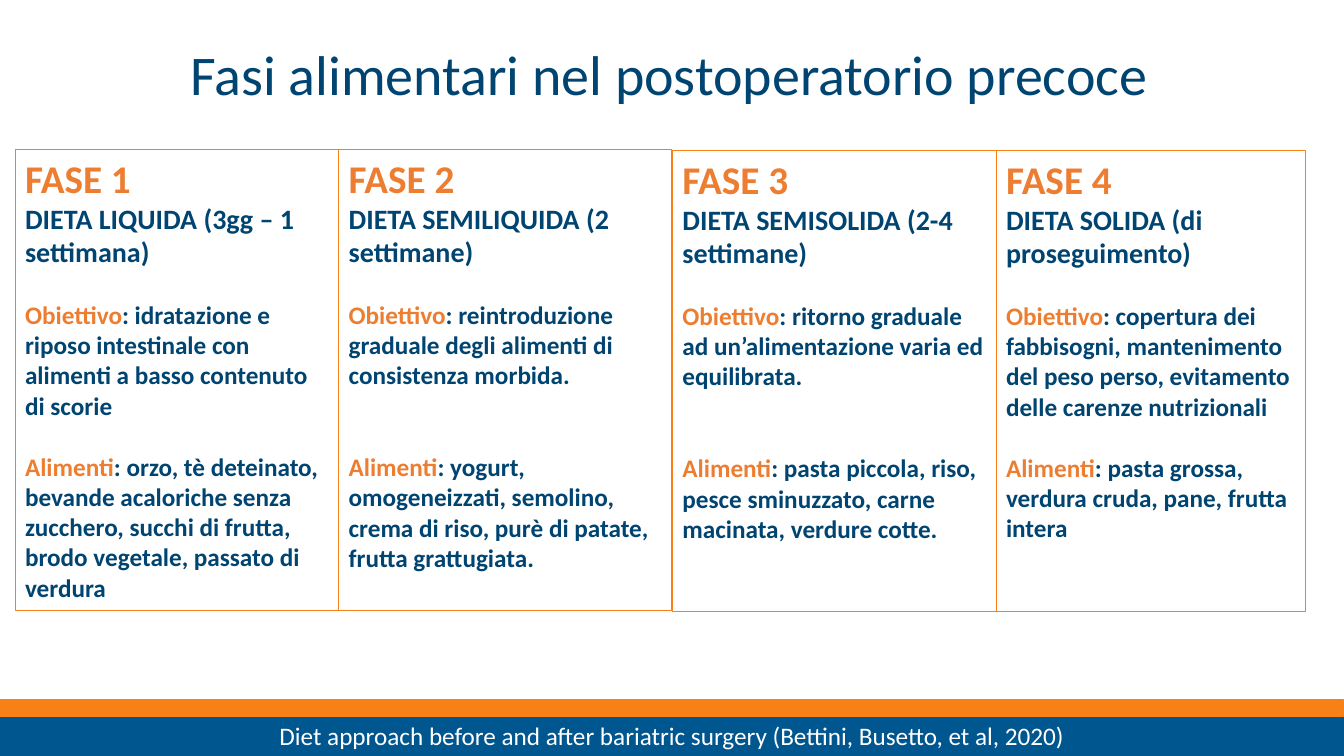
from pptx import Presentation
from pptx import util as u
from pptx.dml.color import RGBColor
from pptx.enum import shapes, text

NAVY = RGBColor(0x00, 0x44, 0x71)
BLUE = RGBColor(0x00, 0x56, 0x8E)
ORANGE = RGBColor(0xF8, 0x81, 0x17)
ACCENT = RGBColor(0xED, 0x7D, 0x31)
WHITE = RGBColor(0xFF, 0xFF, 0xFF)

PHASES = [
    (0.15, 1.48, 3.21, 1, "DIETA LIQUIDA (3gg – 1 settimana)",
     "idratazione e riposo intestinale con alimenti a basso contenuto di scorie",
     "orzo, tè deteinato, bevande acaloriche senza zucchero, succhi di frutta, "
     "brodo vegetale, passato di verdura"),
    (3.36, 1.48, 3.3, 2, "DIETA SEMILIQUIDA (2 settimane)",
     "reintroduzione graduale degli alimenti di consistenza morbida.",
     "yogurt, omogeneizzati, semolino, crema di riso, purè di patate, frutta grattugiata."),
    (6.67, 1.49, 3.21, 2, "DIETA SEMISOLIDA (2-4 settimane)",
     "ritorno graduale ad un’alimentazione varia ed equilibrata.",
     "pasta piccola, riso, pesce sminuzzato, carne macinata, verdure cotte."),
    (9.88, 1.49, 3.07, 1, "DIETA SOLIDA (di proseguimento)",
     "copertura dei fabbisogni, mantenimento del peso perso, evitamento "
     "delle carenze nutrizionali",
     "pasta grossa, verdura cruda, pane, frutta intera"),
]


class DietSlide:
    """Draws the elements of the diet slide in one style."""

    font = "Calibri"
    line_gap = 22

    def __init__(self, slide):
        self.slide = slide

    def add_words(self, paragraph, parts, size, bold=False, gap=0):
        paragraph.alignment = text.PP_ALIGN.LEFT
        paragraph.space_before = u.Pt(gap)
        for words, color in parts:
            run = paragraph.add_run()
            run.text = words
            run.font.name = self.font
            run.font.size = u.Pt(size)
            run.font.bold = bold
            run.font.color.rgb = color

    def title(self, words):
        heading = self.slide.shapes.add_textbox(
            u.Inches(1.79), u.Inches(0.04), u.Inches(9.76), u.Inches(1.45))
        frame = heading.text_frame
        frame.word_wrap = True
        frame.vertical_anchor = text.MSO_ANCHOR.MIDDLE
        self.add_words(frame.paragraphs[0], [(words, NAVY)], 40)
        frame.paragraphs[0].line_spacing = 0.9

    def box(self, left, top, width, height, line, weight, fill=None):
        box = self.slide.shapes.add_shape(
            shapes.MSO_SHAPE.RECTANGLE,
            u.Inches(left), u.Inches(top), u.Inches(width), u.Inches(height))
        box.shadow.inherit = False
        box.line.color.rgb = line
        box.line.width = u.Pt(weight)
        if fill is None:
            box.fill.background()
        else:
            box.fill.solid()
            box.fill.fore_color.rgb = fill
        box.text_frame.word_wrap = True
        return box

    def footer(self, source):
        band = self.box(0, 7.1, 13.33, 0.4, BLUE, 1, BLUE)
        band.text_frame.vertical_anchor = text.MSO_ANCHOR.MIDDLE
        citation = band.text_frame.paragraphs[0]
        self.add_words(citation, [(source, WHITE)], 18)
        citation.alignment = text.PP_ALIGN.CENTER
        self.box(-0.01, 6.94, 13.33, 0.17, ORANGE, 1, ORANGE)

    def phase(self, number, left, top, width, food_gap, diet, goal, foods):
        frame = self.box(left, top, width, 4.58, ORANGE, 0.75).text_frame
        frame.vertical_anchor = text.MSO_ANCHOR.TOP
        rows = [
            ([(f"FASE {number}", ACCENT)], 28, 0),
            ([(diet, NAVY)], 20, 0),
            ([("Obiettivo", ACCENT), (f": {goal}", NAVY)], 18, 1),
            ([("Alimenti", ACCENT), (f": {foods}", NAVY)], 18, food_gap),
        ]
        for index, (parts, size, gap) in enumerate(rows):
            paragraph = frame.add_paragraph() if index else frame.paragraphs[0]
            self.add_words(paragraph, parts, size, True, gap * self.line_gap)


def main():
    deck = Presentation()
    deck.slide_width = u.Inches(13.33)
    deck.slide_height = u.Inches(7.5)
    page = DietSlide(deck.slides.add_slide(deck.slide_layouts[6]))
    page.title("Fasi alimentari nel postoperatorio precoce")
    page.footer("Diet approach before and after bariatric surgery (Bettini, Busetto, et al, 2020)")
    for number, phase in enumerate(PHASES, 1):
        page.phase(number, *phase)
    deck.save("out.pptx")


if __name__ == "__main__":
    main()
